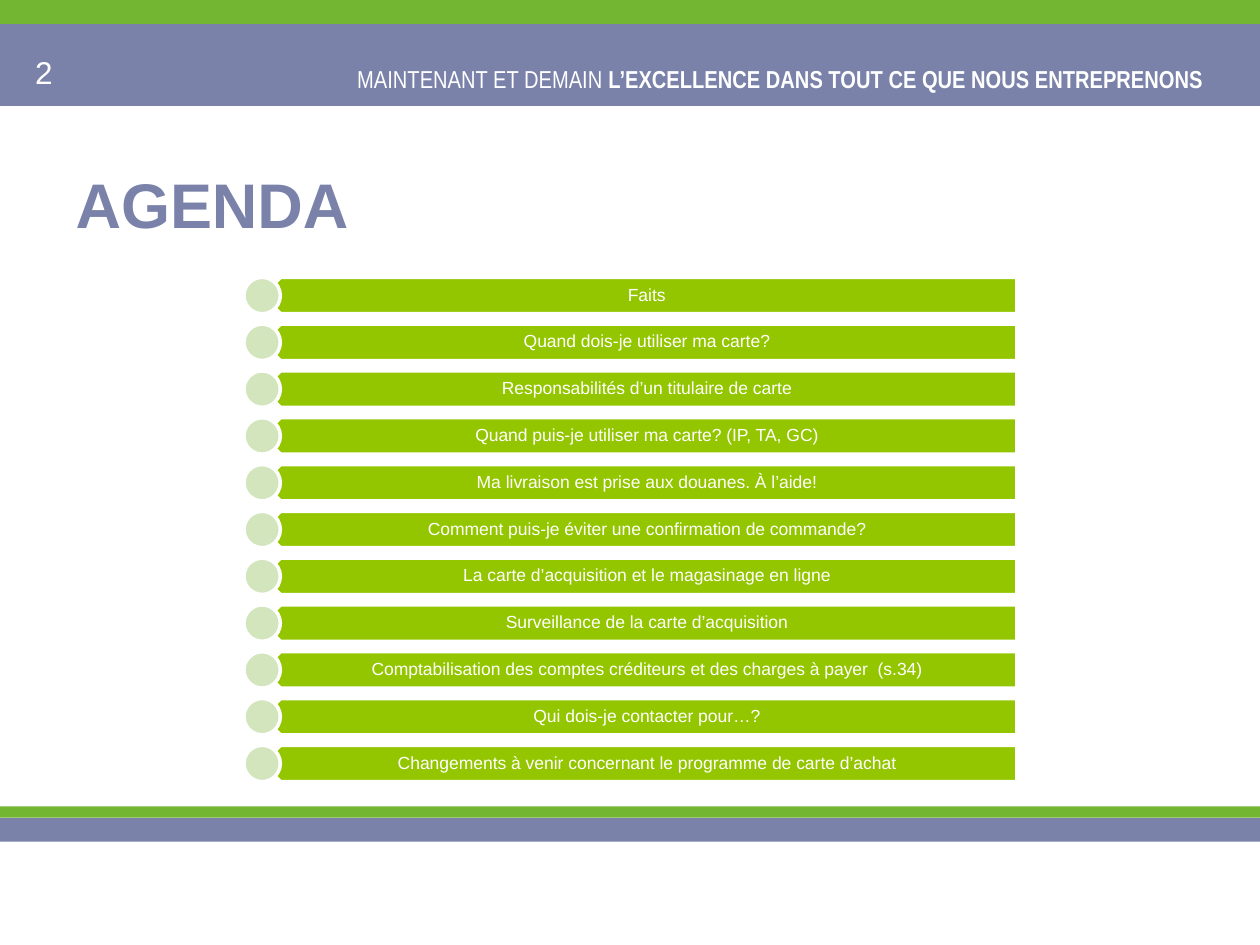
import pptx
import pptx.dml.color
import pptx.enum.shapes
import pptx.enum.text
import pptx.util

Pt = pptx.util.Pt
Shape = pptx.enum.shapes.MSO_SHAPE
Align = pptx.enum.text.PP_ALIGN
Anchor = pptx.enum.text.MSO_ANCHOR

WHITE, SLATE, GREEN = "FFFFFF", "7A82AA", "73B632"
LIME, PALE = "94C600", "D2E5BD"

BANDS = [
    (13.68, 46.8, SLATE),
    (0, 13.68, GREEN),
    (467.28, 13.68, SLATE),
    (460.8, 6.48, GREEN),
]
SLOGAN = [
    ("MAINTENANT ET DEMAIN ", False),
    ("L’EXCELLENCE DANS TOUT CE QUE NOUS ENTREPRENONS", True),
]
TOPICS = [
    "Faits",
    "Quand dois-je utiliser ma carte?",
    "Responsabilités d’un titulaire de carte",
    "Quand puis-je utiliser ma carte? (IP, TA, GC)",
    "Ma livraison est prise aux douanes. À l’aide!",
    "Comment puis-je éviter une confirmation de commande?",
    "La carte d’acquisition et le magasinage en ligne",
    "Surveillance de la carte d’acquisition",
    "Comptabilisation des comptes créditeurs et des charges à payer  (s.34)",
    "Qui dois-je contacter pour…?",
    "Changements à venir concernant le programme de carte d’achat",
]
FIRST_TOP, PITCH, ROW_HEIGHT = 158.5, 26.74, 20.8


def color(value):
    return pptx.dml.color.RGBColor.from_string(value)


def add_shape(page, kind, left, top, width, height, fill, outlined=False):
    shape = page.shapes.add_shape(kind, Pt(left), Pt(top), Pt(width), Pt(height))
    shape.shadow.inherit = False
    shape.fill.solid()
    shape.fill.fore_color.rgb = color(fill)
    if outlined:
        shape.line.color.rgb = color(WHITE)
        shape.line.width = Pt(2)
    else:
        shape.line.fill.background()
    return shape


def write(box, spans, size, ink=WHITE, font="Arial", align=Align.LEFT):
    box.text_frame.word_wrap = True
    para = box.text_frame.paragraphs[0]
    para.alignment = align
    for text, bold in spans:
        span = para.add_run()
        span.text = text
        span.font.name = font
        span.font.size = Pt(size)
        span.font.bold = bold
        span.font.color.rgb = color(ink)
    return para


def add_text(page, left, top, width, height, spans, size, **style):
    box = page.shapes.add_textbox(Pt(left), Pt(top), Pt(width), Pt(height))
    return box, write(box, spans, size, **style)


def add_topic(page, topic, top):
    bar = add_shape(page, Shape.PENTAGON, 149.9, top, 431.2, ROW_HEIGHT, LIME, True)
    bar.rotation = 180
    box, para = add_text(page, 155, top, 425.6, ROW_HEIGHT, [(topic, False)], 10,
                         align=Align.CENTER)
    frame = box.text_frame
    frame.vertical_anchor = Anchor.MIDDLE
    frame.margin_left, frame.margin_right = Pt(9.2), Pt(5.6)
    frame.margin_top = frame.margin_bottom = Pt(3)
    para.line_spacing = 0.9
    add_shape(page, Shape.OVAL, 139.4, top, ROW_HEIGHT, ROW_HEIGHT, PALE, True)


def main():
    deck = pptx.Presentation()
    deck.slide_width, deck.slide_height = Pt(720), Pt(540)
    page = deck.slides.add_slide(deck.slide_layouts[5])

    for top, height, fill in BANDS:
        add_shape(page, Shape.RECTANGLE, 0, top, 720, height, fill)
    add_text(page, 173.5, 33.1, 521.3, 24.5, SLOGAN, 14, font="Arial Narrow",
             align=Align.RIGHT)
    add_text(page, 13, 26.6, 167.8, 28.8, [("2", False)], 18)

    title = page.shapes.title
    title.left, title.top, title.width, title.height = Pt(36), Pt(71.3), Pt(648), Pt(90)
    title.text_frame.vertical_anchor = Anchor.MIDDLE
    write(title, [("AGENDA", True)], 36, ink=SLATE)

    for index, topic in enumerate(TOPICS):
        add_topic(page, topic, FIRST_TOP + index * PITCH)

    deck.save("out.pptx")


if __name__ == "__main__":
    main()
